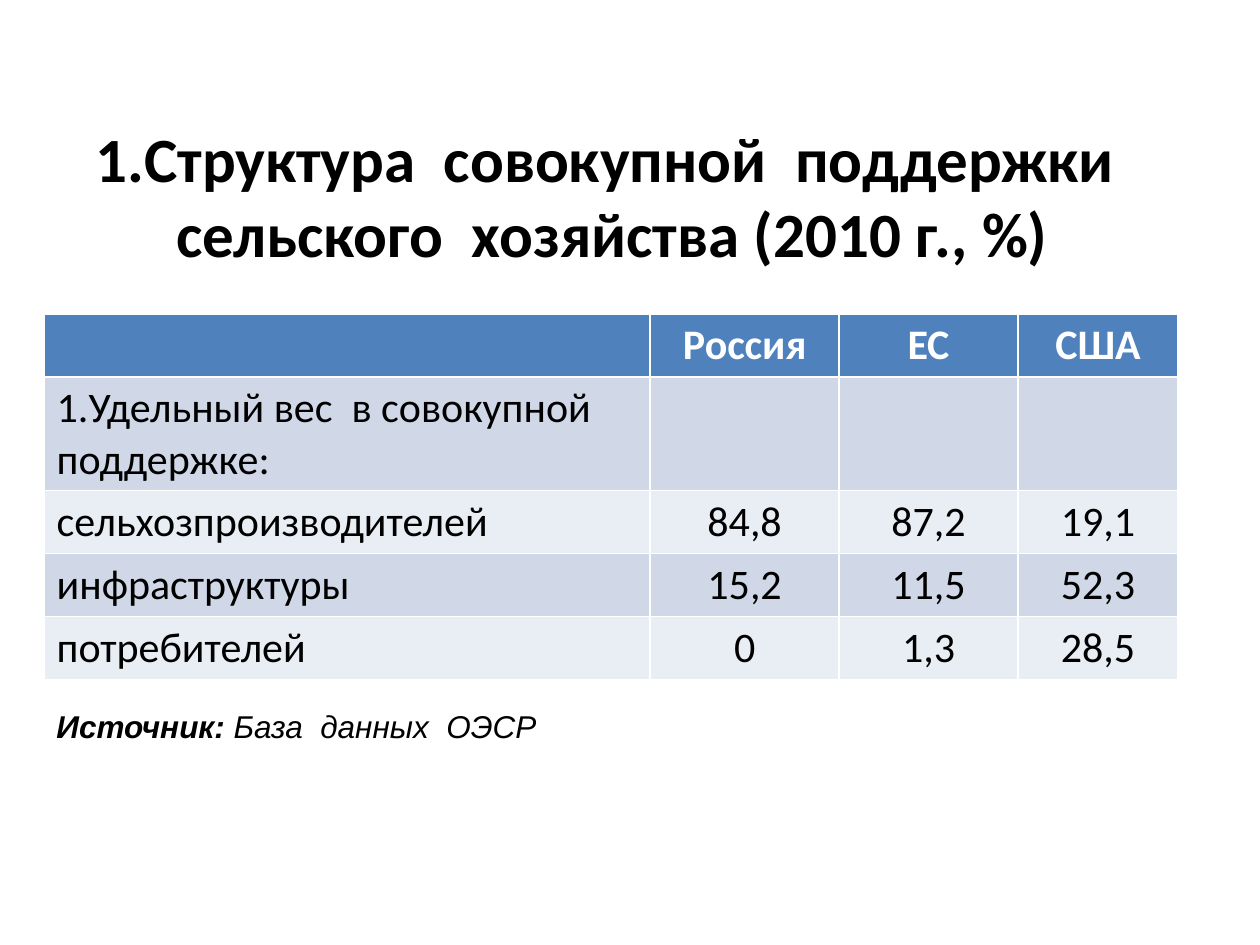
"""Build a slide with a table on the structure of agricultural support."""
from dataclasses import dataclass

from pptx import Presentation
from pptx.dml.color import RGBColor
from pptx.enum.text import MSO_ANCHOR, PP_ALIGN
from pptx.util import Inches, Pt


@dataclass(frozen=True)
class Theme:
    text: str = "000000"
    header_text: str = "FFFFFF"
    header_fill: str = "4F81BD"
    bands: tuple = ("D0D8E8", "E9EDF4")
    font: str = "Calibri"
    source_font: str = "Arial"
    title_size: int = 36
    table_size: int = 24
    source_size: int = 18


theme = Theme()


def add_text(paragraph, text, size, font=theme.font, color=theme.text,
             bold=False, italic=False, align=PP_ALIGN.LEFT):
    paragraph.alignment = align
    run = paragraph.add_run()
    run.text = text
    run.font.name = font
    run.font.size = Pt(size)
    run.font.bold = bold
    run.font.italic = italic
    run.font.color.rgb = RGBColor.from_string(color)


def add_box(slide, left, top, width, height, anchor):
    frame = slide.shapes.add_textbox(
        Inches(left), Inches(top), Inches(width), Inches(height)).text_frame
    frame.word_wrap = True
    frame.vertical_anchor = anchor
    return frame.paragraphs[0]


presentation = Presentation()
presentation.slide_width = Inches(10)
presentation.slide_height = Inches(7.5)
slide = presentation.slides.add_slide(presentation.slide_layouts[6])

title = add_box(slide, 0.28, 0.92, 9.16, 1.25, MSO_ANCHOR.MIDDLE)
add_text(title, "1.Структура  совокупной  поддержки  сельского  хозяйства (2010 г., %)",
         theme.title_size, bold=True, align=PP_ALIGN.CENTER)

rows = [
    ("", "Россия", "ЕС", "США"),
    ("1.Удельный вес  в совокупной  поддержке:", "", "", ""),
    ("сельхозпроизводителей", "84,8", "87,2", "19,1"),
    ("инфраструктуры", "15,2", "11,5", "52,3"),
    ("потребителей", "0", "1,3", "28,5"),
]
column_widths = [4.81, 1.5, 1.42, 1.27]
row_heights = [0.43, 0.78, 0.39, 0.46, 0.44]

table = slide.shapes.add_table(
    len(rows), len(column_widths), Inches(0.35), Inches(2.49),
    Inches(sum(column_widths)), Inches(sum(row_heights))).table
for column, width in zip(table.columns, column_widths):
    column.width = Inches(width)

for row_index, values in enumerate(rows):
    table.rows[row_index].height = Inches(row_heights[row_index])
    is_header = row_index == 0
    fill = theme.header_fill if is_header else theme.bands[(row_index - 1) % 2]
    for column_index, value in enumerate(values):
        cell = table.cell(row_index, column_index)
        cell.fill.solid()
        cell.fill.fore_color.rgb = RGBColor.from_string(fill)
        if not value:
            continue
        is_number = not is_header and column_index > 0
        cell.vertical_anchor = MSO_ANCHOR.BOTTOM if is_number else MSO_ANCHOR.TOP
        add_text(cell.text_frame.paragraphs[0], value, theme.table_size,
                 color=theme.header_text if is_header else theme.text,
                 bold=is_header,
                 align=PP_ALIGN.CENTER if column_index else PP_ALIGN.LEFT)

source = add_box(slide, 0.35, 5.56, 7.17, 0.4, MSO_ANCHOR.TOP)
for text, bold in (("Источник: ", True), ("База  данных  ОЭСР", False)):
    add_text(source, text, theme.source_size, font=theme.source_font,
             bold=bold, italic=True)

presentation.save("out.pptx")
